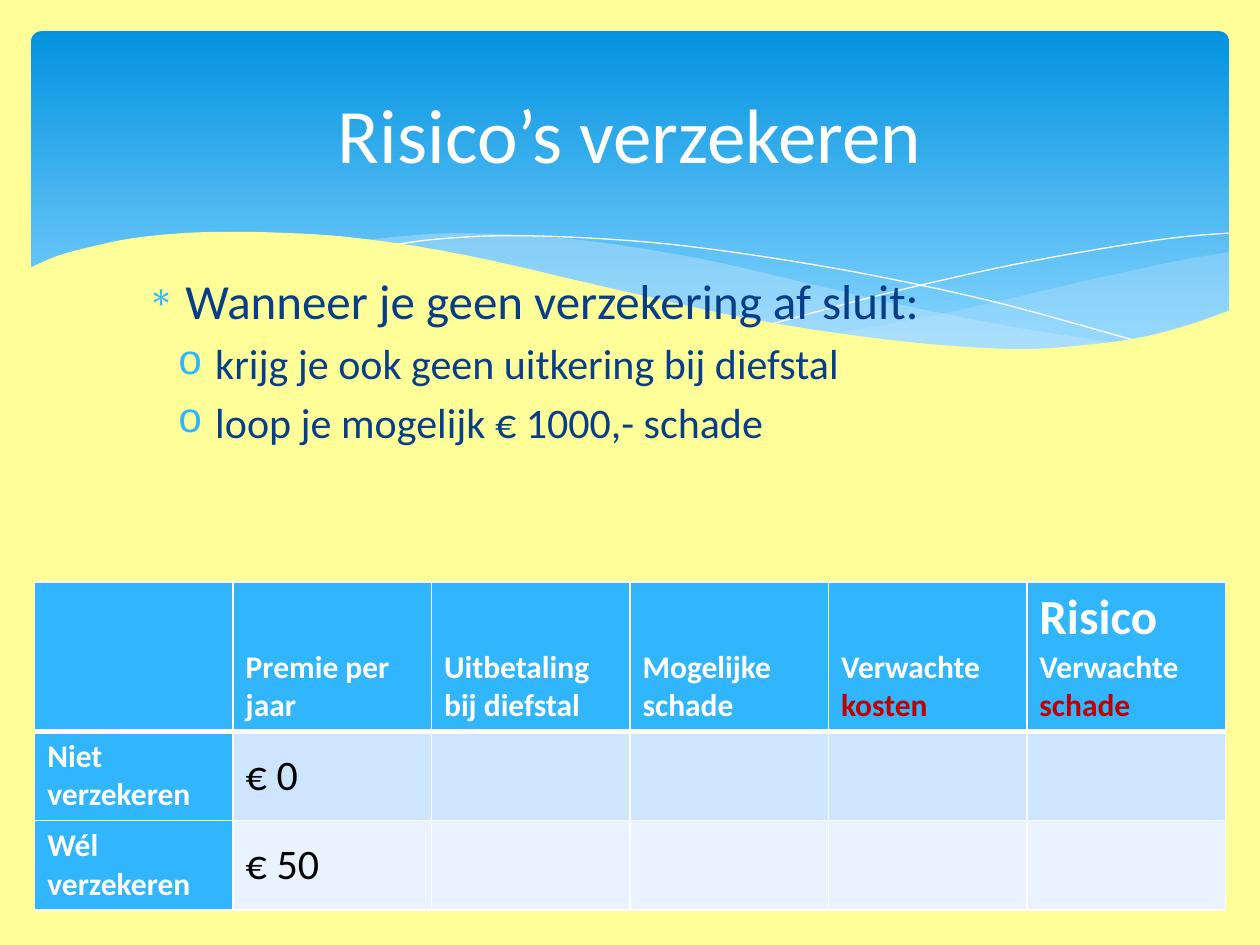
import pptx
import pptx.util
import pptx.dml.color
import pptx.enum.dml
import pptx.enum.shapes
import pptx.enum.text
import pptx.oxml
import pptx.oxml.ns
import lxml.etree

Cm, Pt = pptx.util.Cm, pptx.util.Pt
ANCHOR = pptx.enum.text.MSO_ANCHOR
COLORS = {
    "page": "FFFF99", "sky": "0293E0", "horizon": "83D3FE", "mist": "C6E7FC",
    "white": "FFFFFF", "navy": "073E87", "accent": "31B6FD", "red": "C00000",
    "black": "000000", "band1": "CEE5FE", "band2": "E8F3FF",
}
FONT = "Calibri"
TITLE = "Risico’s verzekeren"
BULLETS = [
    ("Wanneer je geen verzekering af sluit:", 28, 1.0, "∗", "Symbol", 75),
    ("krijg je ook geen uitkering bij diefstal", 24, 1.6, "o", "Courier New", 100),
    ("loop je mogelijk € 1000,- schade", 24, 1.6, "o", "Courier New", 100),
]
HEADERS = [
    [],
    [[("Premie per jaar", 18, "white")]],
    [[("Uitbetaling bij diefstal", 18, "white")]],
    [[("Mogelijke schade", 18, "white")]],
    [[("Verwachte ", 18, "white"), ("kosten", 18, "red")]],
    [[("Risico", 28, "white")],
     [("Verwachte ", 18, "white"), ("schade", 18, "red")]],
]
OPTIONS = [("Niet verzekeren", "€ 0", "band1"), ("Wél verzekeren", "€ 50", "band2")]
ROW_HEIGHTS = [3.01, 1.8, 1.8]
COLUMN_WIDTH = 4.0

WAVE_UNIT = Cm(2.54)
RIGHT_MIST = [
    [(9.76, 2), (9.35, 2.07), (8.61, 2.23), (7.53, 2.48), (6.61, 2.65)],
    [(6.61, 2.65), (7.19, 2.72), (7.69, 2.77), (8.14, 2.78), (8.63, 2.75),
     (9.05, 2.69), (9.42, 2.59), (9.76, 2.47)],
]
LEFT_MIST = [
    [(8.93, 2.73), (8.07, 2.6), (7.06, 2.4), (6.29, 2.22), (5.69, 2.08),
     (5.14, 1.98), (4.65, 1.91), (4.2, 1.87), (3.61, 1.85), (3.13, 1.88), (2.86, 1.91)],
    [(2.86, 1.91), (3.42, 1.99), (4.04, 2.11), (4.91, 2.32), (5.66, 2.48),
     (6.34, 2.61), (6.95, 2.7), (7.48, 2.76), (7.96, 2.78), (8.48, 2.77), (8.93, 2.73)],
]
FALLING_LINE = [
    [(3.09, 1.95), (3.44, 1.9), (4.01, 1.87), (4.69, 1.89), (5.33, 1.94),
     (6.08, 2.04), (6.95, 2.19), (7.95, 2.41), (9.07, 2.72)],
]
RISING_LINE = [
    [(6.13, 2.57), (6.95, 2.35), (7.76, 2.16), (8.36, 2.04), (8.95, 1.94),
     (9.38, 1.88), (9.75, 1.85)],
]
PAGE_WAVE = [
    [(9.77, 2.46), (9.4, 2.59), (8.99, 2.69), (8.5, 2.75), (8.09, 2.77),
     (7.61, 2.75), (7.08, 2.7), (6.48, 2.62), (5.79, 2.5), (5.03, 2.33),
     (4.47, 2.2), (3.91, 2.07), (3.4, 1.97), (2.92, 1.9), (2.5, 1.86),
     (1.93, 1.84), (1.46, 1.85), (1.06, 1.89), (0.76, 1.95), (0.46, 2.03), (0.23, 2.13)],
    [(0.23, 3.29), (9.77, 3.29)],
]
WAVES = [
    (RIGHT_MIST, "mist", 29), (LEFT_MIST, "mist", 40),
    (FALLING_LINE, None, 0), (RISING_LINE, None, 0), (PAGE_WAVE, "page", 100),
]


def rgb(name):
    return pptx.dml.color.RGBColor.from_string(COLORS[name])


def sub(parent, tag, **attributes):
    child = lxml.etree.SubElement(parent, pptx.oxml.ns.qn(tag))
    for key, value in attributes.items():
        child.set(key, str(value))
    return child


def add_run(paragraph, text, size, color, bold=False):
    run = paragraph.add_run()
    run.text = text
    run.font.name, run.font.size, run.font.bold = FONT, Pt(size), bold
    run.font.color.rgb = rgb(color)


def smooth(knots, steps=4):
    if len(knots) == 2:
        return knots
    padded = [knots[0]] + knots + [knots[-1]]
    curve = [knots[0]]
    for a, b, c, d in zip(padded, padded[1:], padded[2:], padded[3:]):
        for t in (i / steps for i in range(1, steps + 1)):
            curve.append(tuple(
                (2 * q + (r - p) * t + (2 * p - 5 * q + 4 * r - s) * t ** 2
                 + (3 * q - p - 3 * r + s) * t ** 3) / 2
                for p, q, r, s in zip(a, b, c, d)))
    return curve


def add_wave(slide, curves, color, opacity):
    points = [(round(x * WAVE_UNIT), round(y * WAVE_UNIT))
              for curve in curves for x, y in smooth(curve)]
    builder = slide.shapes.build_freeform(*points[0])
    builder.add_line_segments(points[1:], close=color is not None)
    wave = builder.convert_to_shape()
    wave.shadow.inherit = False
    if color is None:
        wave.fill.background()
        wave.line.color.rgb = rgb("white")
        wave.line.width = Pt(0)
        return
    wave.line.fill.background()
    wave.fill.solid()
    wave.fill.fore_color.rgb = rgb(color)
    if opacity < 100:
        tint = wave.fill._xPr.find(".//" + pptx.oxml.ns.qn("a:srgbClr"))
        sub(tint, "a:alpha", val=opacity * 1000)


def add_banner(slide):
    banner = slide.shapes.add_shape(
        pptx.enum.shapes.MSO_SHAPE.ROUNDED_RECTANGLE, Cm(0.63), Cm(0.63), Cm(24.15), Cm(6.86))
    banner.adjustments[0] = 0.03
    banner.shadow.inherit = False
    banner.line.fill.background()
    banner.fill.gradient()
    banner.fill.gradient_angle = 270
    for stop, color, position in zip(banner.fill.gradient_stops, ("sky", "horizon"), (0, 0.9)):
        stop.color.rgb = rgb(color)
        stop.position = position


def add_bullets(slide):
    frame = slide.shapes.add_textbox(Cm(2.49), Cm(5.33), Cm(20.57), Cm(5.21)).text_frame
    frame.word_wrap = True
    for i, (text, size, indent, mark, mark_font, mark_size) in enumerate(BULLETS):
        paragraph = frame.add_paragraph() if i else frame.paragraphs[0]
        paragraph.space_before = Pt(size * 0.2)
        add_run(paragraph, text, size, "navy")
        properties = paragraph._p.get_or_add_pPr()
        properties.set("marL", str(Cm(indent)))
        properties.set("indent", str(-Cm(0.76)))
        sub(sub(properties, "a:buClr"), "a:srgbClr", val=COLORS["accent"])
        sub(properties, "a:buSzPct", val=mark_size * 1000)
        sub(properties, "a:buFont", typeface=mark_font)
        sub(properties, "a:buChar", char=mark)


def add_title(slide):
    frame = slide.shapes.add_textbox(Cm(1.27), Cm(0.94), Cm(22.86), Cm(3.48)).text_frame
    frame.word_wrap = True
    frame.vertical_anchor = ANCHOR.MIDDLE
    frame.paragraphs[0].alignment = pptx.enum.text.PP_ALIGN.CENTER
    add_run(frame.paragraphs[0], TITLE, 44, "white")


def fill_cell(cell, lines, fill, anchor, bold, bottom=1, top=1):
    properties = cell._tc.get_or_add_tcPr()
    for side, width in zip("LRTB", (1, 1, top, bottom)):
        border = sub(properties, "a:ln" + side, w=Pt(width))
        sub(sub(border, "a:solidFill"), "a:srgbClr", val=COLORS["white"])
    cell.fill.solid()
    cell.fill.fore_color.rgb = rgb(fill)
    cell.vertical_anchor = anchor
    for i, line in enumerate(lines):
        paragraph = cell.text_frame.add_paragraph() if i else cell.text_frame.paragraphs[0]
        for text, size, color in line:
            add_run(paragraph, text, size, color, bold)


def add_cost_table(slide):
    columns = len(HEADERS)
    costs = slide.shapes.add_table(
        len(ROW_HEIGHTS), columns, Cm(0.7), Cm(11.73),
        Cm(COLUMN_WIDTH * columns), Cm(sum(ROW_HEIGHTS))).table
    for column in costs.columns:
        column.width = Cm(COLUMN_WIDTH)
    for row, height in zip(costs.rows, ROW_HEIGHTS):
        row.height = Cm(height)
    for c, lines in enumerate(HEADERS):
        fill_cell(costs.cell(0, c), lines, "accent", ANCHOR.BOTTOM, True, bottom=3)
    for r, (option, premium, band) in enumerate(OPTIONS, 1):
        top = 3 if r == 1 else 1
        fill_cell(costs.cell(r, 0), [[(option, 18, "white")]], "accent", ANCHOR.TOP, True, top=top)
        for c in range(1, columns):
            lines = [[(premium, 24, "black")]] if c == 1 else []
            fill_cell(costs.cell(r, c), lines, band, ANCHOR.MIDDLE, False, top=top)


def main():
    deck = pptx.Presentation()
    deck.slide_width, deck.slide_height = Cm(25.4), Cm(19.05)
    slide = deck.slides.add_slide(deck.slide_layouts[6])
    slide.background.fill.solid()
    slide.background.fill.fore_color.rgb = rgb("page")
    add_banner(slide)
    for wave in WAVES:
        add_wave(slide, *wave)
    add_bullets(slide)
    add_title(slide)
    add_cost_table(slide)
    deck.save("out.pptx")


if __name__ == "__main__":
    main()
